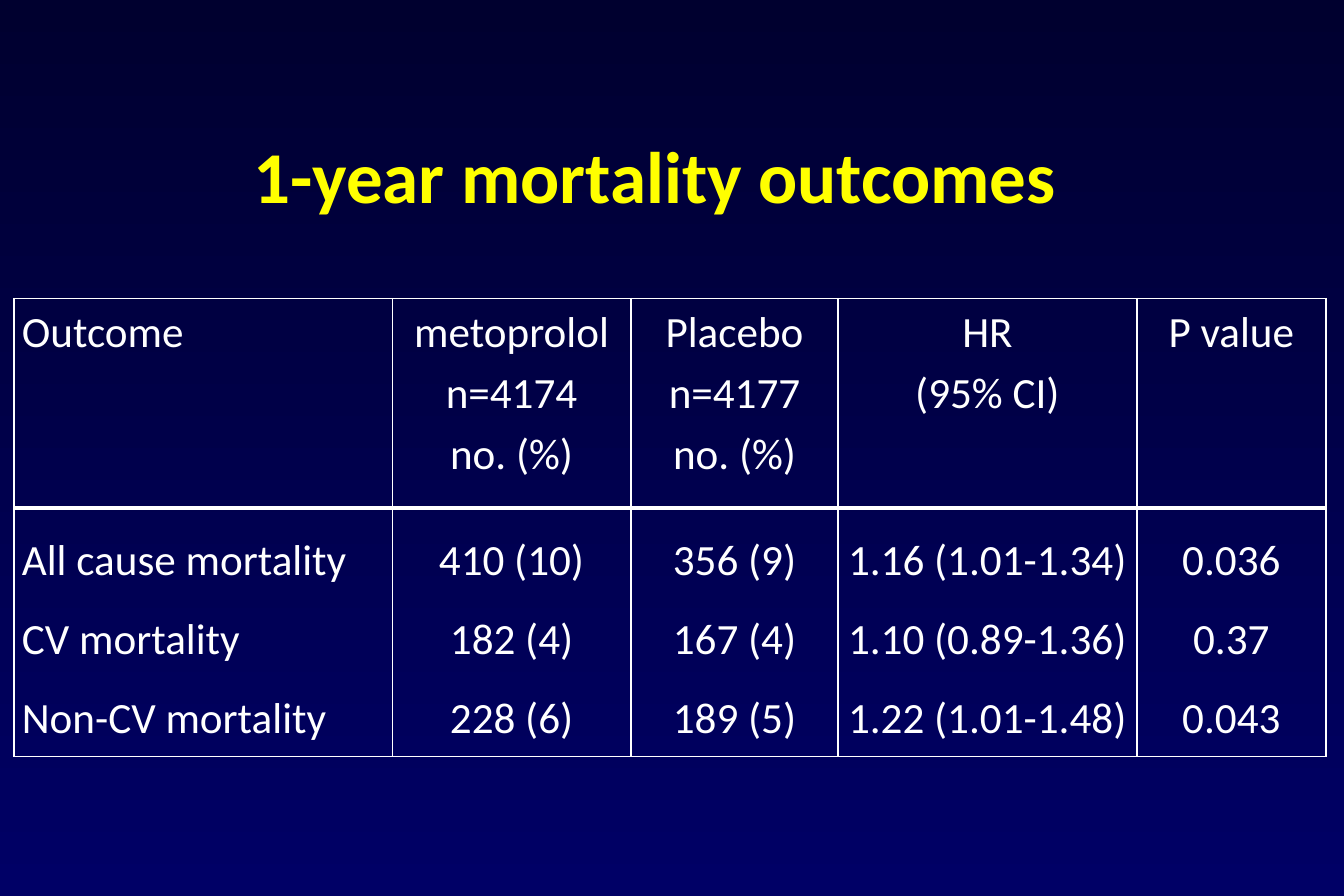
from lxml.etree import SubElement
from pptx import Presentation
from pptx.dml.color import RGBColor
from pptx.enum.text import MSO_ANCHOR as Anchor, PP_ALIGN as Align
from pptx.oxml.ns import qn
from pptx.util import Pt

PX = 7620  # EMU per px, 120 px to the inch
WHITE, YELLOW = "FFFFFF", "FFFF00"
NIGHT, NAVY = "00002F", "000066"

COLUMN_WIDTHS = [380, 240, 208, 300, 190]
ROW_HEIGHTS = [210, 250]
LINE_SPACINGS = [1.15, 1.5]
OUTCOMES = [
    [
        ["Outcome"],
        ["metoprolol", "n=4174", "no. (%)"],
        ["Placebo", "n=4177", "no. (%)"],
        ["HR", "(95% CI)"],
        ["P value"],
    ],
    [
        ["All cause mortality", "CV mortality", "Non-CV mortality"],
        ["410 (10)", "182 (4)", "228 (6)"],
        ["356 (9)", "167 (4)", "189 (5)"],
        ["1.16 (1.01-1.34)", "1.10 (0.89-1.36)", "1.22 (1.01-1.48)"],
        ["0.036", "0.37", "0.043"],
    ],
]


def px(length):
    return length * PX


def color(hex_code):
    return RGBColor.from_string(hex_code)


def write(frame, lines, size=26, fill=WHITE, bold=False, align=Align.CENTER, spacing=1.0):
    for index, line in enumerate(lines):
        paragraph = frame.add_paragraph() if index else frame.paragraphs[0]
        paragraph.alignment = align
        paragraph.line_spacing = spacing
        run = paragraph.add_run()
        run.text = line
        run.font.name = "Calibri"
        run.font.size = Pt(size)
        run.font.bold = bold
        run.font.color.rgb = color(fill)


def paint_background(slide, top, bottom):
    fill = slide.background.fill
    fill.gradient()
    fill.gradient_angle = 270
    for stop, shade in zip(fill.gradient_stops, (top, bottom)):
        stop.color.rgb = color(shade)


def add_title(slide, text, left, top, width, height):
    title = slide.shapes.add_textbox(px(left), px(top), px(width), px(height))
    frame = title.text_frame
    frame.word_wrap = True
    frame.vertical_anchor = Anchor.MIDDLE
    write(frame, [text], size=44, fill=YELLOW, bold=True)


def draw_borders(cell, **widths):
    properties = cell._tc.get_or_add_tcPr()
    for side, width in widths.items():
        border = SubElement(properties, qn(f"a:ln{side}"), w=str(Pt(width)))
        solid = SubElement(border, qn("a:solidFill"))
        SubElement(solid, qn("a:srgbClr"), val=WHITE)


def format_cell(cell, is_header):
    draw_borders(cell, L=1, R=1, T=1 if is_header else 3, B=3 if is_header else 1)
    cell.fill.background()
    cell.margin_left = cell.margin_right = px(8)
    cell.margin_top = cell.margin_bottom = 0
    cell.vertical_anchor = Anchor.TOP


def add_outcome_table(slide, left, top):
    table = slide.shapes.add_table(
        len(ROW_HEIGHTS), len(COLUMN_WIDTHS), px(left), px(top),
        px(sum(COLUMN_WIDTHS)), px(sum(ROW_HEIGHTS))).table
    table.first_row = table.horz_banding = False
    for column, width in zip(table.columns, COLUMN_WIDTHS):
        column.width = px(width)
    for row_index, row in enumerate(table.rows):
        row.height = px(ROW_HEIGHTS[row_index])
        for column_index, cell in enumerate(row.cells):
            format_cell(cell, is_header=row_index == 0)
            write(cell.text_frame, OUTCOMES[row_index][column_index],
                  align=Align.CENTER if column_index else Align.LEFT,
                  spacing=LINE_SPACINGS[row_index])


def main():
    deck = Presentation()
    deck.slide_width, deck.slide_height = px(1350), px(900)
    slide = deck.slides.add_slide(deck.slide_layouts[6])

    # Background and title
    paint_background(slide, NIGHT, NAVY)
    add_title(slide, "1-year mortality outcomes", 85, 110, 1147, 130)

    # Mortality by treatment
    add_outcome_table(slide, 14, 300)

    deck.save("out.pptx")


if __name__ == "__main__":
    main()
